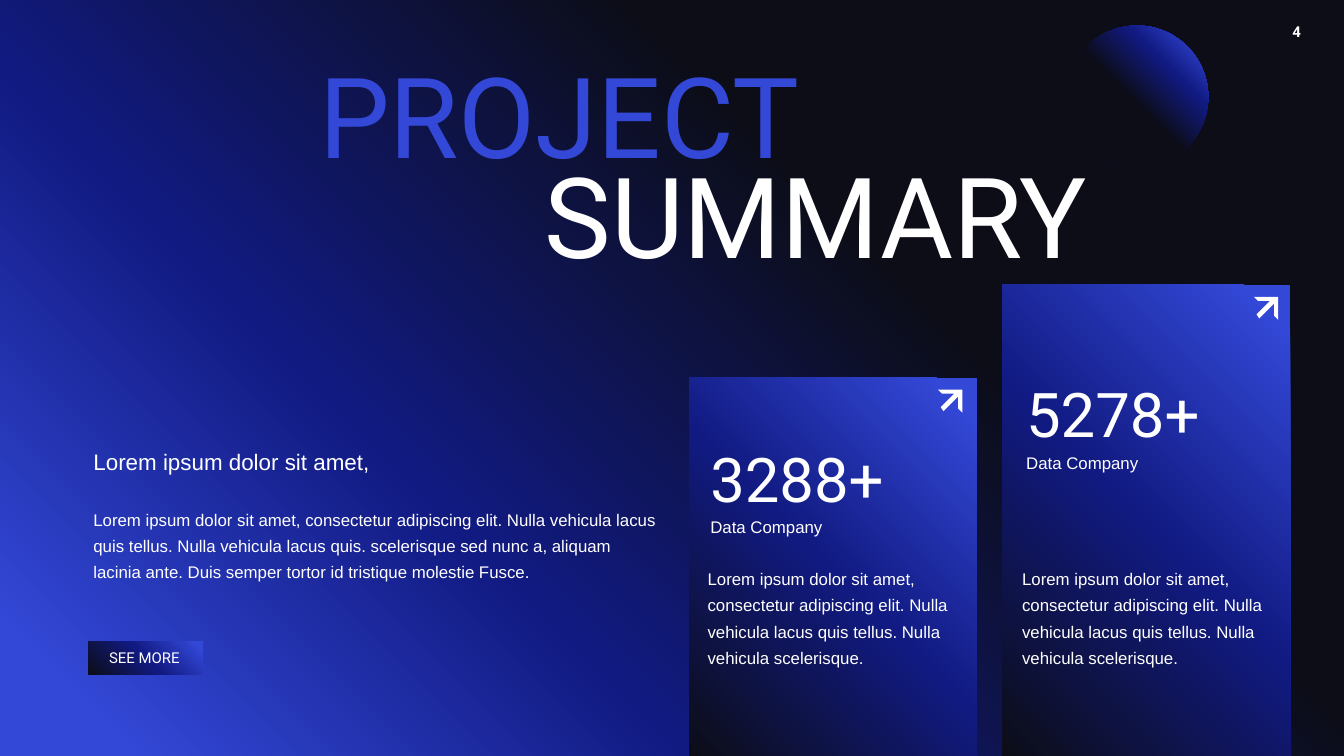
"""Build the project summary slide with two data cards."""
from lxml import etree
from pptx import Presentation
from pptx.dml.color import RGBColor
from pptx.enum.shapes import MSO_SHAPE
from pptx.enum.text import MSO_AUTO_SIZE, PP_ALIGN
from pptx.oxml.ns import qn
from pptx.util import Inches, Pt

RECTANGLE, OVAL = MSO_SHAPE.RECTANGLE, MSO_SHAPE.OVAL
GROW = MSO_AUTO_SIZE.SHAPE_TO_FIT_TEXT
LEFT, CENTER = PP_ALIGN.LEFT, PP_ALIGN.CENTER

WHITE = RGBColor(0xFF, 0xFF, 0xFF)
BLUE = RGBColor(0x33, 0x48, 0xD7)
NAVY = RGBColor(0x11, 0x1A, 0x81)
INK = RGBColor(0x0C, 0x0D, 0x17)

BACKDROP_STOPS = [(0, BLUE), (6, BLUE), (33, NAVY), (66, INK), (100, INK)]
MOON_STOPS = [(0, BLUE), (6, BLUE), (29, NAVY), (53, INK), (100, INK)]
PANEL_STOPS = [(0, BLUE), (6, BLUE), (51, NAVY), (100, INK)]
RISING, FALLING = 45, 225

SLIDE_WIDTH = 10
SLIDE_HEIGHT = SLIDE_WIDTH * 9 / 16
SIDE_MARGIN, END_MARGIN = Pt(5.4), Pt(2.7)
CARD_WIDTH = 2.14
CARD_BODY_TOP = 4.15
LABEL_DROP = 0.57
ARROW = [(0, 0), (0, 0.17), (-0.03, 0.14), (-0.03, 0.05), (-0.14, 0.16),
         (-0.16, 0.13), (-0.06, 0.03), (-0.15, 0.03), (-0.18, 0)]

TITLE = [("PROJECT", 2.3, 0.31, BLUE), ("SUMMARY", 3.98, 1.05, WHITE)]
INTRO_HEADING = "Lorem ipsum dolor sit amet,"
INTRO_BODY = (
    "Lorem ipsum dolor sit amet, consectetur adipiscing elit. Nulla vehicula "
    "lacus quis tellus. Nulla vehicula lacus quis. scelerisque sed nunc a, "
    "aliquam lacinia ante. Duis semper tortor id tristique molestie Fusce."
)
CARD_LABEL = "Data Company"
CARD_BODY = (
    "Lorem ipsum dolor sit amet, consectetur adipiscing elit. Nulla vehicula "
    "lacus quis tellus. Nulla vehicula scelerisque."
)
CARDS = [
    {"figure": "3288+", "corner": (5.13, 2.81), "figure_at": (5.21, 3.24),
     "body_left": 5.19, "arrow_tip": (7.16, 2.9)},
    {"figure": "5278+", "corner": (7.46, 2.12), "figure_at": (7.56, 2.76),
     "body_left": 7.53, "arrow_tip": (9.51, 2.21)},
]


def apply_gradient(fill, element, stops, angle):
    fill.gradient()
    fill.gradient_angle = angle
    stop_list = element.find(".//" + qn("a:gsLst"))
    for old_stop in list(stop_list):
        stop_list.remove(old_stop)
    for percent, color in stops:
        stop = etree.SubElement(stop_list, qn("a:gs"), pos=str(percent * 1000))
        etree.SubElement(stop, qn("a:srgbClr"), val=str(color))


def add_panel(slide, preset, box, stops, angle):
    panel = slide.shapes.add_shape(preset, *map(Inches, box))
    panel.shadow.inherit = False
    panel.line.fill.background()
    apply_gradient(panel.fill, panel.element, stops, angle)
    return panel


def add_text(slide, text, box, size, font="Arial", color=WHITE, bold=False,
             align=LEFT, spacing=None):
    frame = slide.shapes.add_textbox(*map(Inches, box)).text_frame
    frame.word_wrap = True
    frame.auto_size = GROW
    frame.margin_left = frame.margin_right = SIDE_MARGIN
    frame.margin_top = frame.margin_bottom = END_MARGIN
    frame.text = text
    paragraph = frame.paragraphs[0]
    paragraph.alignment = align
    if spacing:
        paragraph.line_spacing = spacing
    style = paragraph.runs[0].font
    style.name, style.size, style.bold = font, Pt(size), bold
    style.color.rgb = color


def add_arrow(slide, tip):
    points = [(Inches(tip[0] + dx), Inches(tip[1] + dy)) for dx, dy in ARROW]
    builder = slide.shapes.build_freeform(*points[0])
    builder.add_line_segments(points[1:], close=True)
    arrow = builder.convert_to_shape()
    arrow.shadow.inherit = False
    arrow.fill.solid()
    arrow.fill.fore_color.rgb = WHITE
    arrow.line.fill.background()


def add_card(slide, card):
    left, top = card["corner"]
    add_panel(slide, RECTANGLE, (left, top, CARD_WIDTH, SLIDE_HEIGHT - top),
              PANEL_STOPS, FALLING)
    x, y = card["figure_at"]
    add_text(slide, card["figure"], (x, y, 1.77, 0.63), 33, "Roboto")
    add_text(slide, CARD_LABEL, (x, y + LABEL_DROP, 1.52, 0.23), 9)
    add_text(slide, CARD_BODY, (card["body_left"], CARD_BODY_TOP, 2, 0.85), 9,
             spacing=1.3)
    add_arrow(slide, card["arrow_tip"])


def main():
    deck = Presentation()
    deck.slide_width, deck.slide_height = Inches(SLIDE_WIDTH), Inches(SLIDE_HEIGHT)
    slide = deck.slides.add_slide(deck.slide_layouts[6])
    apply_gradient(slide.background.fill, slide.element, BACKDROP_STOPS, RISING)

    add_text(slide, "4", (9.54, 0.13, 0.28, 0.21), 8, "Roboto", bold=True)
    moon = add_panel(slide, OVAL, (7.93, 0.19, 1.06, 1.06), MOON_STOPS, RISING)
    moon.rotation = 180
    for word, left, top, color in TITLE:
        add_text(slide, word, (left, top, 4.66, 1.09), 60, "Roboto", color)

    add_text(slide, INTRO_HEADING, (0.62, 3.3, 4.01, 0.28), 12)
    add_text(slide, INTRO_BODY, (0.62, 3.71, 4.36, 0.65), 9, spacing=1.3)
    add_panel(slide, RECTANGLE, (0.66, 4.77, 0.85, 0.25), PANEL_STOPS, FALLING)
    add_text(slide, "SEE MORE", (0.68, 4.79, 0.79, 0.21), 8, "Roboto", align=CENTER)

    for card in CARDS:
        add_card(slide, card)
    deck.save("out.pptx")


if __name__ == "__main__":
    main()
